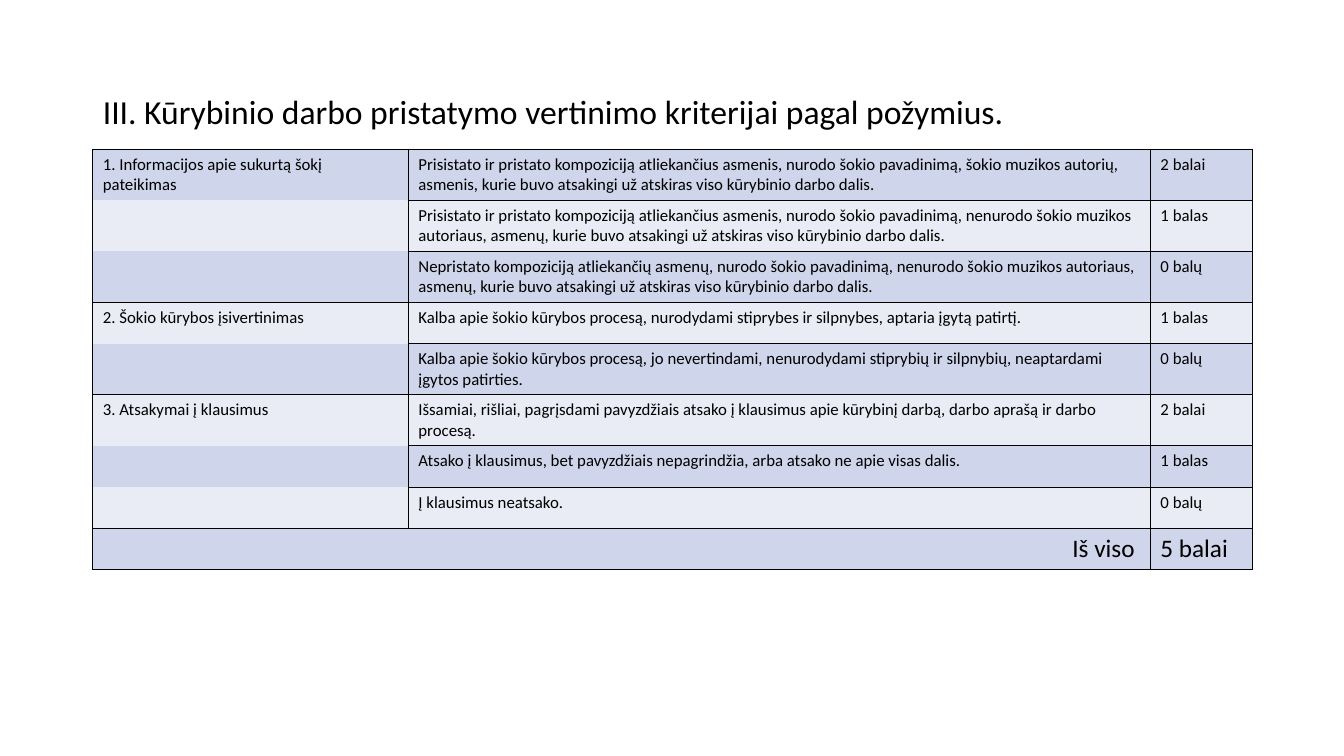
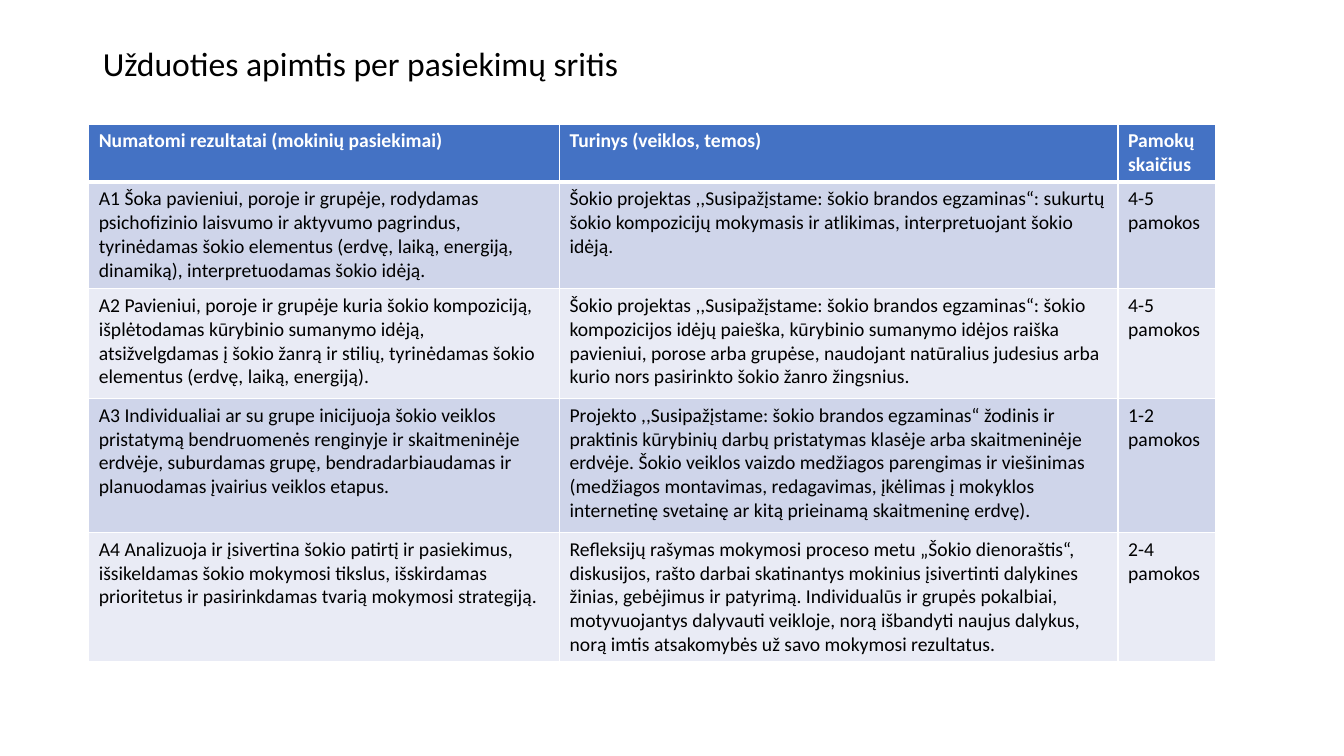
from lxml.etree import SubElement
from pptx import Presentation
from pptx.dml.color import RGBColor
from pptx.enum.text import MSO_ANCHOR, MSO_AUTO_SIZE, PP_ALIGN
from pptx.oxml.ns import qn
from pptx.util import Pt

PX = 9144  # 100 px to the inch
FONT = "Calibri"
COLOURS = {
    "text": "000000",
    "white": "FFFFFF",
    "header": "4472C4",
    "band_dark": "CFD5EA",
    "band_light": "E9EBF5",
}
BANDS = ("band_dark", "band_light")
SIDES = ("L", "R", "T", "B")

presentation = Presentation()
presentation.slide_width = 1333 * PX
presentation.slide_height = 750 * PX


def add_table_slide(title_text, title_box, table_box, column_widths, row_heights):
    """Add a title-only slide with an empty table and return the table."""
    slide = presentation.slides.add_slide(presentation.slide_layouts[5])
    title = slide.shapes.title
    title.left, title.top, title.width, title.height = [n * PX for n in title_box]
    frame = title.text_frame
    frame.text = title_text
    frame.word_wrap = True
    frame.auto_size = MSO_AUTO_SIZE.NONE
    frame.vertical_anchor = MSO_ANCHOR.MIDDLE
    paragraph = frame.paragraphs[0]
    paragraph.alignment = PP_ALIGN.LEFT
    paragraph.line_spacing = 0.9
    paragraph.font.name = FONT
    paragraph.font.size = Pt(24)
    paragraph.font.color.rgb = RGBColor.from_string(COLOURS["text"])

    table = slide.shapes.add_table(
        len(row_heights), len(column_widths), *[n * PX for n in table_box]
    ).table
    for column, width in zip(table.columns, column_widths):
        column.width = width * PX
    for row, height in zip(table.rows, row_heights):
        row.height = height * PX
    return table


def format_cell(cell, text, size, fill, border, widths, colour="text", bold=False):
    """Write and style a cell; widths maps each side to points, 0 for no line."""
    cell.text = text
    paragraph = cell.text_frame.paragraphs[0]
    paragraph.font.name = FONT
    paragraph.font.size = Pt(size)
    paragraph.font.bold = bold
    paragraph.font.color.rgb = RGBColor.from_string(COLOURS[colour])
    properties = cell._tc.get_or_add_tcPr()
    for side in SIDES:
        line = SubElement(properties, qn(f"a:ln{side}"), w=str(Pt(widths[side])))
        if widths[side]:
            solid = SubElement(line, qn("a:solidFill"))
            SubElement(solid, qn("a:srgbClr"), val=COLOURS[border])
        else:
            SubElement(line, qn("a:noFill"))
    cell.fill.solid()
    cell.fill.fore_color.rgb = RGBColor.from_string(COLOURS[fill])


# Slide 1: assessment criteria; an empty first cell continues the criterion above
criteria = [
    ("1. Informacijos apie sukurtą šokį pateikimas",
     "Prisistato ir pristato kompoziciją atliekančius asmenis, nurodo šokio pavadinimą, "
     "šokio muzikos autorių, asmenis, kurie buvo atsakingi už atskiras viso kūrybinio "
     "darbo dalis.", "2 balai"),
    ("",
     "Prisistato ir pristato kompoziciją atliekančius asmenis, nurodo šokio pavadinimą, "
     "nenurodo šokio muzikos autoriaus, asmenų, kurie buvo atsakingi už atskiras viso "
     "kūrybinio darbo dalis.", "1 balas"),
    ("",
     "Nepristato kompoziciją atliekančių asmenų, nurodo šokio pavadinimą, nenurodo šokio "
     "muzikos autoriaus, asmenų, kurie buvo atsakingi už atskiras viso kūrybinio darbo "
     "dalis.", "0 balų"),
    ("2. Šokio kūrybos įsivertinimas",
     "Kalba apie šokio kūrybos procesą, nurodydami stiprybes ir silpnybes, aptaria įgytą "
     "patirtį.", "1 balas"),
    ("",
     "Kalba apie šokio kūrybos procesą, jo nevertindami, nenurodydami stiprybių ir "
     "silpnybių, neaptardami įgytos patirties.", "0 balų"),
    ("3. Atsakymai į klausimus",
     "Išsamiai, rišliai, pagrįsdami pavyzdžiais atsako į klausimus apie kūrybinį darbą, "
     "darbo aprašą ir darbo procesą.", "2 balai"),
    ("",
     "Atsako į klausimus, bet pavyzdžiais nepagrindžia, arba atsako ne apie visas dalis.",
     "1 balas"),
    ("", "Į klausimus neatsako.", "0 balų"),
    ("", "Iš viso ", "5 balai"),
]
criteria_table = add_table_slide(
    "III. Kūrybinio darbo pristatymo vertinimo kriterijai pagal požymius.",
    (92, 40, 1150, 145), (92, 148, 1150, 369), (313, 736, 101), [41] * len(criteria))
criteria_table.first_row = False
total_row = len(criteria) - 1
group_starts = [index for index, row in enumerate(criteria) if row[0]] + [total_row]
for row_index, row in enumerate(criteria):
    is_total = row_index == total_row
    for column_index, text in enumerate(row):
        widths = dict.fromkeys(SIDES, 1)
        if column_index == 0:
            widths["T"] = int(row_index in group_starts)
            widths["B"] = int(is_total or row_index + 1 in group_starts)
            widths["R"] = int(not is_total)
        elif column_index == 1:
            widths["L"] = int(not is_total)
        format_cell(criteria_table.cell(row_index, column_index), text,
                    18 if is_total else 12, BANDS[row_index % 2], "text", widths)
total_label = criteria_table.cell(total_row, 1).text_frame.paragraphs[0]
total_label.alignment = PP_ALIGN.RIGHT

# Slide 2: scope of the task by area of achievement
scope = [
    ("Numatomi rezultatai (mokinių pasiekimai)", "Turinys (veiklos, temos)",
     "Pamokų skaičius"),
    ("A1 Šoka pavieniui, poroje ir grupėje, rodydamas psichofizinio laisvumo ir aktyvumo "
     "pagrindus, tyrinėdamas šokio elementus (erdvę, laiką, energiją, dinamiką), "
     "interpretuodamas šokio idėją.",
     "Šokio projektas ,,Susipažįstame: šokio brandos egzaminas“: sukurtų šokio "
     "kompozicijų mokymasis ir atlikimas, interpretuojant šokio idėją.",
     "4-5 pamokos"),
    ("A2 Pavieniui, poroje ir grupėje kuria šokio kompoziciją, išplėtodamas kūrybinio "
     "sumanymo idėją, atsižvelgdamas į šokio žanrą ir stilių, tyrinėdamas šokio elementus "
     "(erdvę, laiką, energiją).",
     "Šokio projektas ,,Susipažįstame: šokio brandos egzaminas“: šokio kompozicijos idėjų "
     "paieška, kūrybinio sumanymo idėjos raiška pavieniui, porose arba grupėse, naudojant "
     "natūralius judesius arba kurio nors pasirinkto šokio žanro žingsnius.",
     "4-5 pamokos"),
    ("A3 Individualiai ar su grupe inicijuoja šokio veiklos pristatymą bendruomenės "
     "renginyje ir skaitmeninėje erdvėje, suburdamas grupę, bendradarbiaudamas ir "
     "planuodamas įvairius veiklos etapus.",
     "Projekto ,,Susipažįstame: šokio brandos egzaminas“ žodinis ir praktinis kūrybinių "
     "darbų pristatymas klasėje arba skaitmeninėje erdvėje. Šokio veiklos vaizdo medžiagos "
     "parengimas ir viešinimas (medžiagos montavimas, redagavimas, įkėlimas į mokyklos "
     "internetinę svetainę ar kitą prieinamą skaitmeninę erdvę).",
     "1-2 pamokos"),
    ("A4 Analizuoja ir įsivertina šokio patirtį ir pasiekimus, išsikeldamas šokio mokymosi "
     "tikslus, išskirdamas prioritetus ir pasirinkdamas tvarią mokymosi strategiją.",
     "Refleksijų rašymas mokymosi proceso metu „Šokio dienoraštis“, diskusijos, rašto "
     "darbai skatinantys mokinius įsivertinti dalykines žinias, gebėjimus ir patyrimą. "
     "Individualūs ir grupės pokalbiai, motyvuojantys dalyvauti veikloje, norą išbandyti "
     "naujus dalykus, norą imtis atsakomybės už savo mokymosi rezultatus.",
     "2-4 pamokos"),
]
scope_table = add_table_slide(
    "Užduoties apimtis per pasiekimų sritis",
    (92, 40, 1150, 51), (88, 123, 1118, 533), (467, 554, 97), (57, 106, 109, 133, 128))
for row_index, row in enumerate(scope):
    is_header = row_index == 0
    widths = dict.fromkeys(SIDES, 1)
    if is_header:
        widths["B"] = 3
    elif row_index == 1:
        widths["T"] = 3
    for column_index, text in enumerate(row):
        format_cell(scope_table.cell(row_index, column_index), text, 14,
                    "header" if is_header else BANDS[(row_index - 1) % 2],
                    "white", widths, "white" if is_header else "text", is_header)

presentation.save("out.pptx")
